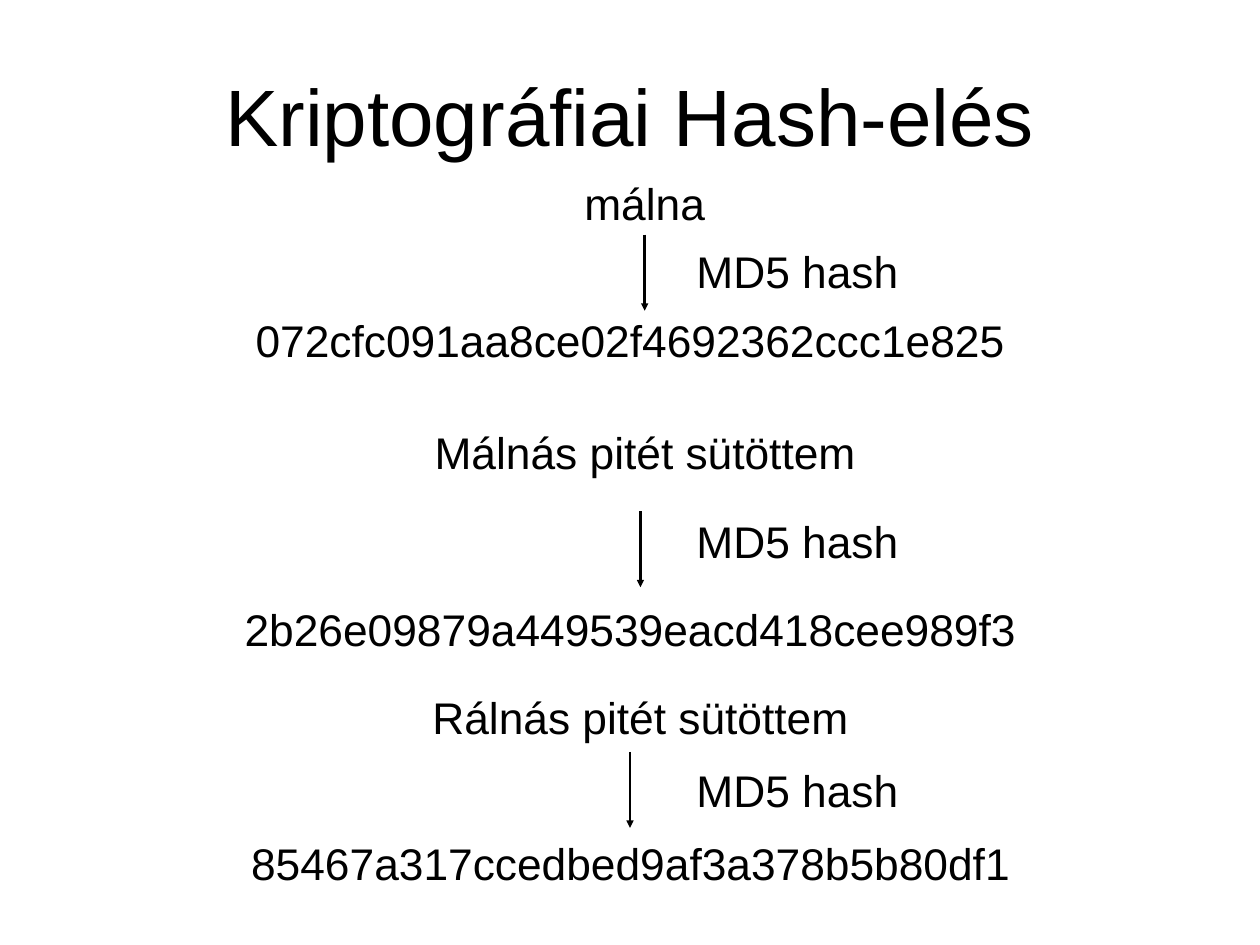
from dataclasses import dataclass
from lxml import etree
from pptx import Presentation
from pptx.dml.color import RGBColor
from pptx.enum.shapes import MSO_CONNECTOR
from pptx.enum.text import MSO_ANCHOR, MSO_AUTO_SIZE, PP_ALIGN
from pptx.oxml.ns import qn
from pptx.util import Cm, Pt

LINE = MSO_CONNECTOR.STRAIGHT
MIDDLE = MSO_ANCHOR.MIDDLE
GROW = MSO_AUTO_SIZE.SHAPE_TO_FIT_TEXT
FIXED = MSO_AUTO_SIZE.NONE
CENTER = PP_ALIGN.CENTER
BOTTOM = 2


@dataclass(frozen=True)
class Theme:
    """Colours, type sizes and shared lengths in centimetres."""
    ink: RGBColor = RGBColor(0, 0, 0)
    paper: RGBColor = RGBColor(255, 255, 255)
    font: str = "Arial"
    title: int = 65
    body: int = 36
    stroke: int = 2
    inset: float = 0.15
    row: float = 1.8
    drop: float = 2.18
    label: float = 6.1


@dataclass(frozen=True)
class Stage:
    """One hashing step; each place is an offset from the stage's box."""
    plain: str
    digest: str
    plain_x: float
    plain_w: float
    arrow: tuple
    label_y: float
    digest_at: tuple
    digest_w: float
    joined: bool = False


THEME = Theme()
LABEL_X = 13.1
STAGES = [
    (4.93, Stage("málna", "072cfc091aa8ce02f4692362ccc1e825", 9.88, 3.78,
                 (11.77, 1.8), 1.93, (0.25, 3.91), 22.2, joined=True)),
    (12.07, Stage("Málnás pitét sütöttem", "2b26e09879a449539eacd418cee989f3",
                  5.56, 12.45, (11.65, 2.59), 2.54, (0, 5.05), 22.71)),
    (19.66, Stage("Rálnás pitét sütöttem", "85467a317ccedbed9af3a378b5b80df1",
                  5.53, 12.24, (11.35, 1.9), 2.08, (0.05, 4.17), 22.63)),
]


def add_text(shapes, text, box, size=THEME.body, wrap=False, fit=GROW):
    """Add centred text in a box given in centimetres."""
    shape = shapes.add_textbox(*map(Cm, box))
    frame = shape.text_frame
    frame.word_wrap = wrap
    frame.auto_size = fit
    frame.vertical_anchor = MIDDLE
    frame.margin_left = frame.margin_right = Cm(THEME.inset)
    frame.margin_top = frame.margin_bottom = Cm(THEME.inset)
    para = frame.paragraphs[0]
    para.alignment = CENTER
    run = para.add_run()
    run.text = text
    run.font.name = THEME.font
    run.font.size = Pt(size)
    run.font.color.rgb = THEME.ink
    return shape


def add_arrow(shapes, x, y):
    """Add a downward arrow starting at the given point."""
    arrow = shapes.add_connector(LINE, Cm(x), Cm(y), Cm(x), Cm(y + THEME.drop))
    arrow.line.color.rgb = THEME.ink
    arrow.line.width = Pt(THEME.stroke)
    props = arrow._element.spPr
    etree.SubElement(props.find(qn("a:ln")), qn("a:tailEnd"), type="triangle")
    etree.SubElement(props, qn("a:effectLst"))
    return arrow


def add_stage(slide, stage, left, top):
    """Place a plain text, its labelled arrow and its digest."""
    plain = add_text(slide.shapes, stage.plain,
                     (left + stage.plain_x, top, stage.plain_w, THEME.row))
    step = slide.shapes.add_group_shape()
    add_text(step.shapes, "MD5 hash",
             (left + LABEL_X, top + stage.label_y, THEME.label, THEME.row))
    dx, dy = stage.arrow
    arrow = add_arrow(step.shapes, left + dx, top + dy)
    if stage.joined:
        arrow.begin_connect(plain, BOTTOM)
    dx, dy = stage.digest_at
    add_text(slide.shapes, stage.digest,
             (left + dx, top + dy, stage.digest_w, THEME.row))


def add_title(slide, box):
    """Place the slide title."""
    add_text(slide.shapes, "Kriptográfiai Hash-elés", box,
             size=THEME.title, wrap=True, fit=FIXED)


def main():
    """Build and save the slide."""
    deck = Presentation()
    deck.slide_width, deck.slide_height = Cm(36.12), Cm(27.1)
    slide = deck.slides.add_slide(deck.slide_layouts[6])
    fill = slide.background.fill
    fill.solid()
    fill.fore_color.rgb = THEME.paper
    add_title(slide, (2.64, 0.28, 30.84, 5.99))
    for top, stage in STAGES:
        add_stage(slide, stage, 6.71, top)
    deck.save("out.pptx")


if __name__ == "__main__":
    main()
